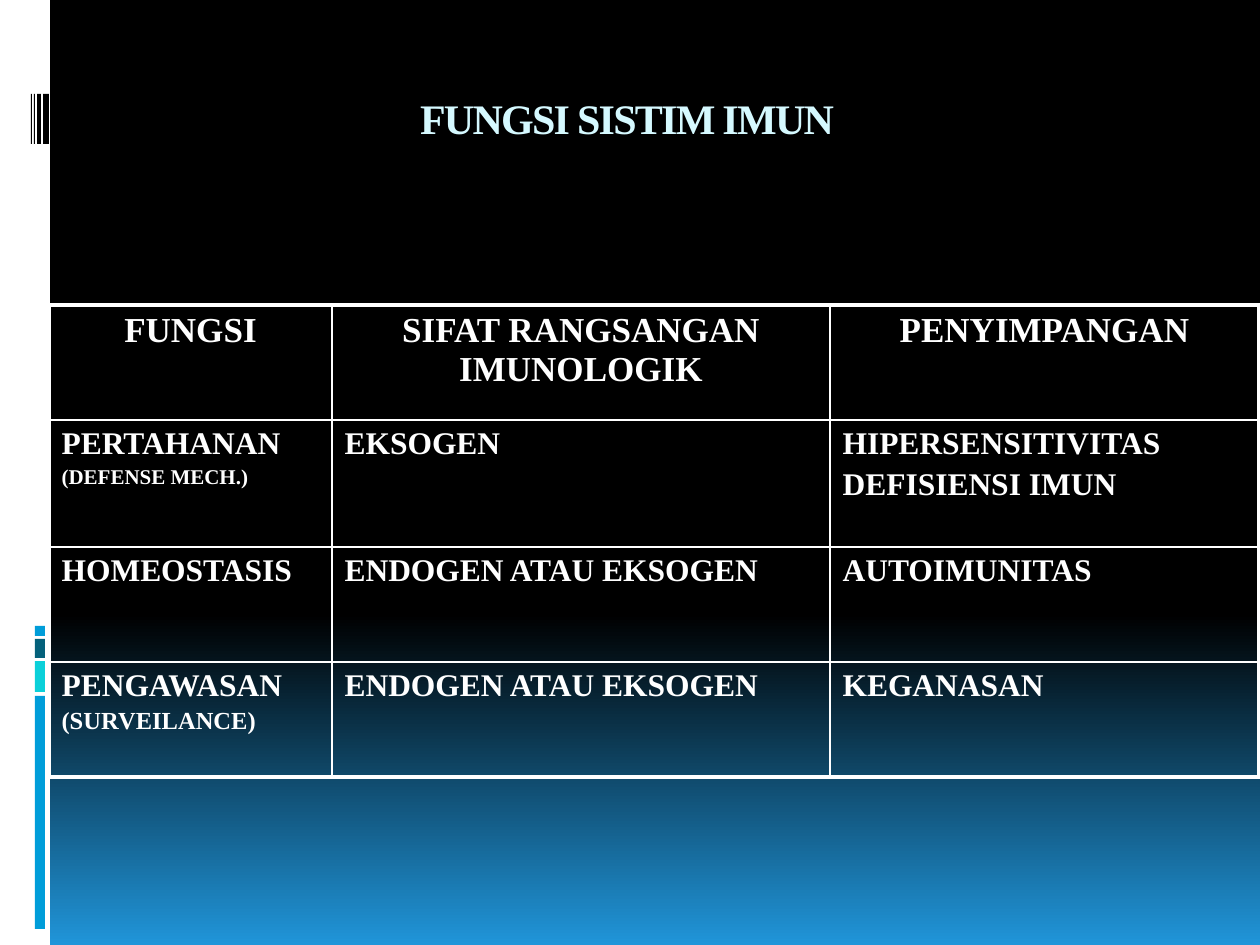
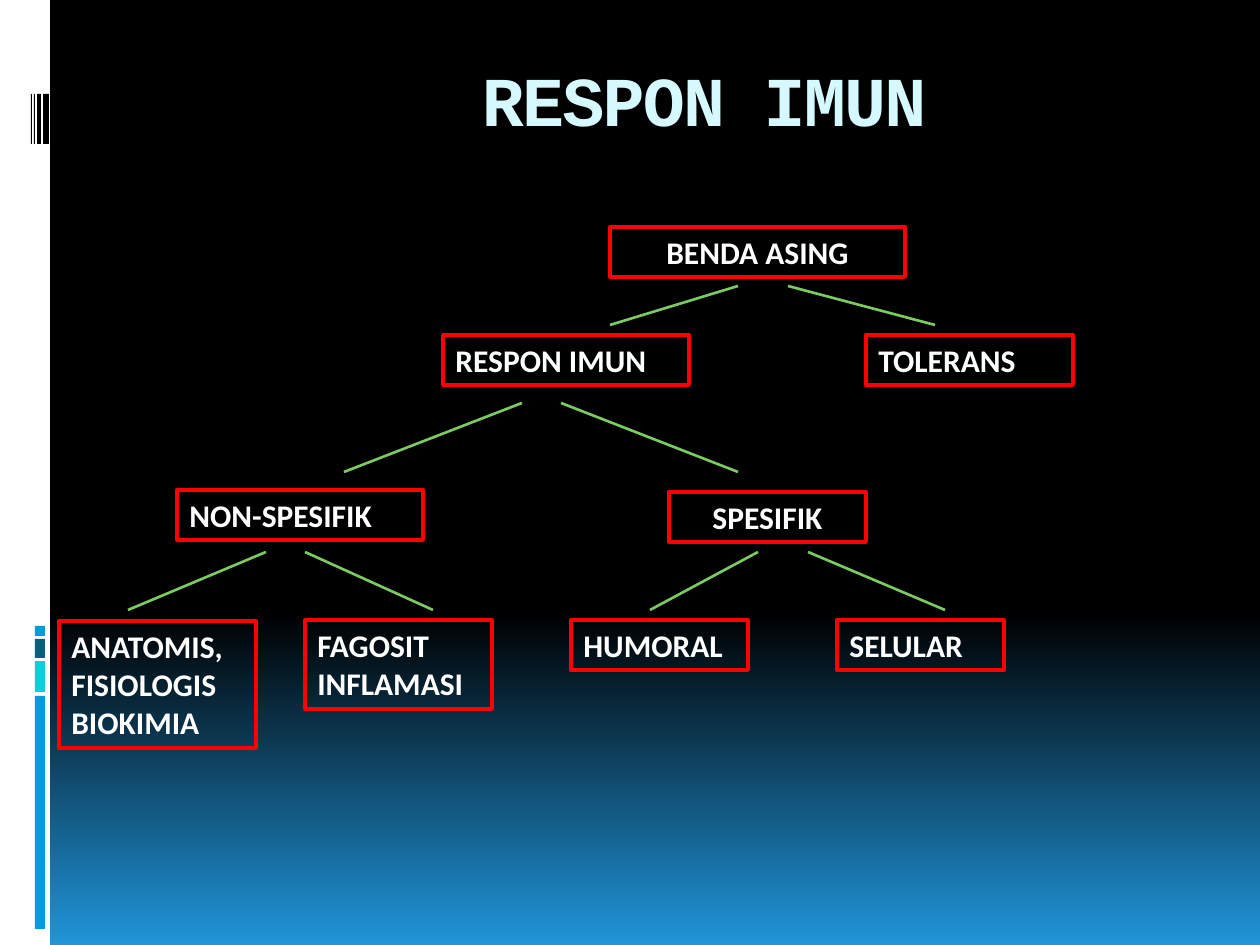
from lxml import etree
from pptx import Presentation
from pptx import util as u
from pptx.dml.color import RGBColor
from pptx.enum import shapes, text
from pptx.oxml.ns import qn

HUES = {
    "black": "000000",
    "white": "FFFFFF",
    "sky": "2095D9",
    "blue": "009DD9",
    "aqua": "0BD0D9",
    "teal": "04617B",
    "title": "D5F9FF",
    "red": "FF0000",
    "green": "7CCA62",
}
WIDE, TALL = 1260, 945
SERIF, SANS, MONO = "Times New Roman", "Calibri", "Courier New"
MID, LEFT = text.PP_ALIGN.CENTER, text.PP_ALIGN.LEFT

SIDE = [
    (0, 0, 50, 945, "white"),
    (35, 696, 10, 233, "blue"),
    (35, 661, 10, 31, "aqua"),
    (35, 639, 10, 19, "teal"),
    (35, 626, 10, 10, "blue"),
    (43, 94, 6, 50, "black"),
    (37, 94, 4, 50, "black"),
    (34, 94, 1, 50, "black"),
    (31, 94, 1, 50, "black"),
]

COLS = [283, 498, 429]
ROWS = [115, 127, 115, 115]
CELLS = [
    [[("FUNGSI", 20)], [("SIFAT RANGSANGAN IMUNOLOGIK", 20)], [("PENYIMPANGAN", 20)]],
    [[("PERTAHANAN", 18), ("(DEFENSE MECH.)", 12)], [("EKSOGEN", 18)],
     [("HIPERSENSITIVITAS", 18), ("DEFISIENSI IMUN", 18)]],
    [[("HOMEOSTASIS", 18)], [("ENDOGEN ATAU EKSOGEN", 18)], [("AUTOIMUNITAS", 18)]],
    [[("PENGAWASAN", 18), ("(SURVEILANCE)", 14)], [("ENDOGEN ATAU EKSOGEN", 18)],
     [("KEGANASAN", 18)]],
]

NODES = [
    (610, 227, 295, 50, MID, ["BENDA ASING"]),
    (443, 335, 246, 50, LEFT, ["RESPON IMUN"]),
    (866, 335, 207, 50, LEFT, ["TOLERANS"]),
    (177, 490, 246, 50, LEFT, ["NON-SPESIFIK"]),
    (669, 492, 197, 50, MID, ["SPESIFIK"]),
    (59, 621, 197, 127, LEFT, ["ANATOMIS, FISIOLOGIS", "BIOKIMIA"]),
    (305, 620, 187, 89, LEFT, ["FAGOSIT", "INFLAMASI"]),
    (571, 620, 177, 50, LEFT, ["HUMORAL"]),
    (837, 620, 167, 50, LEFT, ["SELULAR"]),
]

FORKS = [
    (286, 325, [(738, 610), (788, 935)]),
    (403, 472, [(522, 344), (561, 738)]),
    (552, 610, [(266, 128), (305, 433), (758, 650), (808, 945)]),
]


def px(size):
    return u.Emu(round(size * 914400 / 126))


def hue(name):
    return RGBColor.from_string(HUES[name])


def add_run(para, words, size, font, tint="white"):
    run = para.add_run()
    run.text = words
    run.font.size = u.Pt(size)
    run.font.name = font
    run.font.bold = True
    run.font.color.rgb = hue(tint)
    return run


def add_lines(frame, lines, font, align, gap=0):
    for i, (words, size) in enumerate(lines):
        para = frame.add_paragraph() if i else frame.paragraphs[0]
        para.alignment = align
        if i:
            para.space_before = u.Pt(size * gap)
        add_run(para, words, size, font)


def add_rect(slide, left, top, width, height):
    rect = slide.shapes.add_shape(
        shapes.MSO_SHAPE.RECTANGLE, px(left), px(top), px(width), px(height))
    rect.shadow.inherit = False
    return rect


def add_base(deck):
    slide = deck.slides.add_slide(deck.slide_layouts[6])
    fill = slide.background.fill
    fill.gradient()
    fill.gradient_angle = 270
    for stop, spot, name in zip(fill.gradient_stops, (0.65, 1), ("black", "sky")):
        stop.position = spot
        stop.color.rgb = hue(name)
    for *place, name in SIDE:
        bar = add_rect(slide, *place)
        bar.fill.solid()
        bar.fill.fore_color.rgb = hue(name)
        bar.line.fill.background()
    return slide


def add_title(slide, words, place, size, font):
    box = slide.shapes.add_textbox(*map(px, place))
    frame = box.text_frame
    frame.word_wrap = True
    frame.vertical_anchor = text.MSO_ANCHOR.MIDDLE
    para = frame.paragraphs[0]
    para.alignment = MID
    run = add_run(para, words, size, font, "title")
    run.font._element.set("spc", "-100")


def add_edge(cell, side, width):
    edge = etree.SubElement(cell._tc.get_or_add_tcPr(), qn("a:ln" + side))
    edge.set("w", str(u.Pt(width)))
    fill = etree.SubElement(edge, qn("a:solidFill"))
    etree.SubElement(fill, qn("a:srgbClr")).set("val", HUES["white"])


def add_grid(slide, left, top):
    table = slide.shapes.add_table(
        len(ROWS), len(COLS), px(left), px(top), px(sum(COLS)), px(sum(ROWS))).table
    table.horz_banding = False
    for col, width in zip(table.columns, COLS):
        col.width = px(width)
    for row, height in zip(table.rows, ROWS):
        row.height = px(height)
    for r, line in enumerate(CELLS):
        for c, lines in enumerate(line):
            cell = table.cell(r, c)
            outer = {"L": c == 0, "R": c == len(COLS) - 1,
                     "T": r == 0, "B": r == len(ROWS) - 1}
            for side, thick in outer.items():
                add_edge(cell, side, 2.25 if thick else 1)
            cell.fill.background()
            add_lines(cell.text_frame, lines, SERIF, LEFT if r else MID, 0.2)


def add_node(slide, left, top, width, height, align, lines):
    node = add_rect(slide, left, top, width, height)
    node.fill.background()
    node.line.color.rgb = hue("red")
    node.line.width = u.Pt(2.25)
    frame = node.text_frame
    frame.word_wrap = True
    frame.vertical_anchor = text.MSO_ANCHOR.TOP
    add_lines(frame, [(words, 18) for words in lines], SANS, align)


def add_link(slide, *ends):
    link = slide.shapes.add_connector(
        shapes.MSO_CONNECTOR.STRAIGHT, *map(px, ends))
    link.line.color.rgb = hue("green")
    link.line.width = u.Pt(1.5)
    etree.SubElement(link._element.spPr, qn("a:effectLst"))


def main():
    deck = Presentation()
    deck.slide_width, deck.slide_height = px(WIDE), px(TALL)

    slide = add_base(deck)
    add_title(slide, "FUNGSI SISTIM IMUN", (32, 78, 1190, 80), 24, SERIF)
    add_grid(slide, 49, 305)

    slide = add_base(deck)
    add_title(slide, "RESPON IMUN", (189, 38, 1030, 120), 40, MONO)
    for node in NODES:
        add_node(slide, *node)
    for top, foot, pairs in FORKS:
        for start, end in pairs:
            add_link(slide, start, top, end, foot)

    deck.save("out.pptx")


if __name__ == "__main__":
    main()
